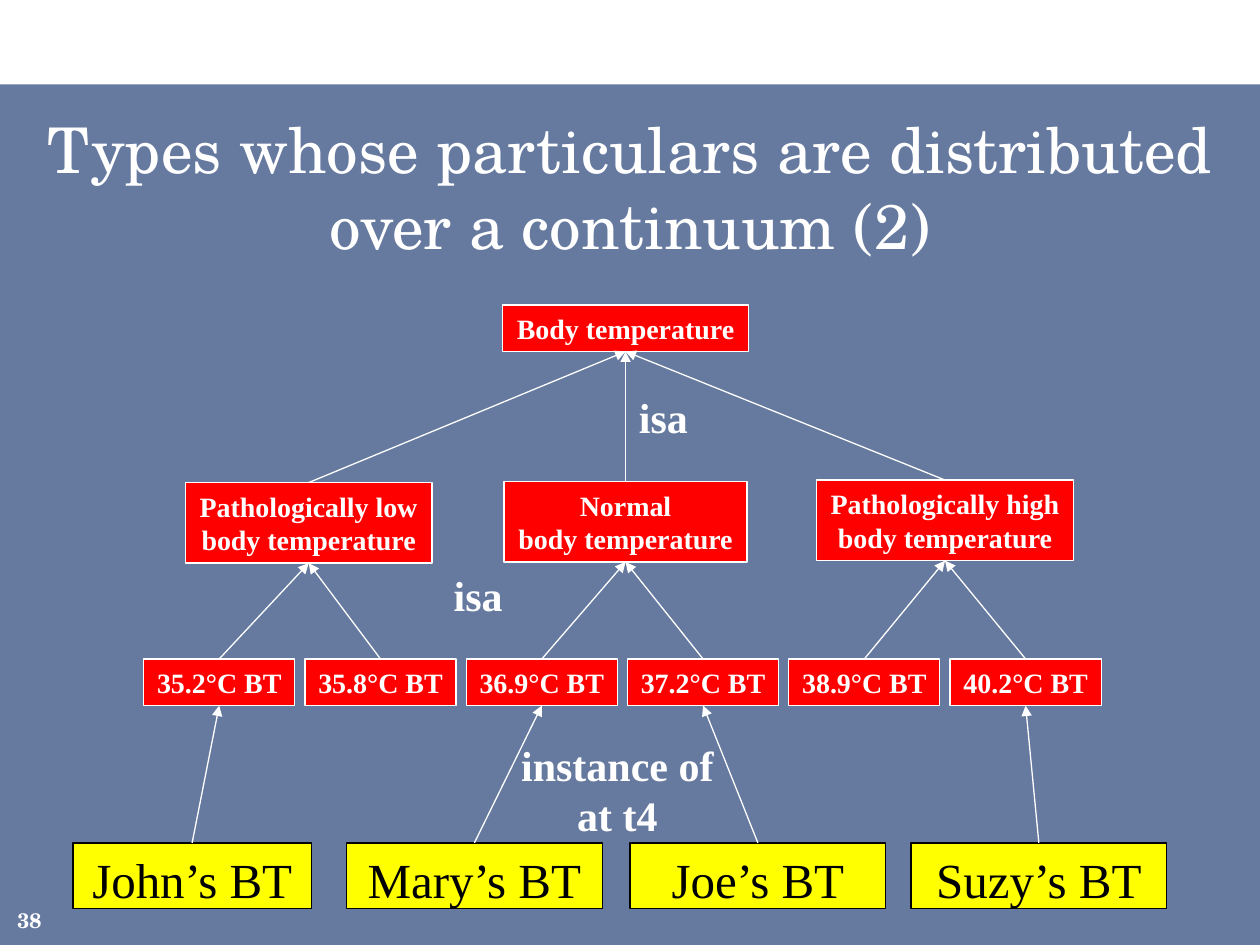
from lxml import etree
from pptx import Presentation
from pptx.dml.color import RGBColor
from pptx.enum.shapes import MSO_CONNECTOR, MSO_SHAPE
from pptx.enum.text import MSO_ANCHOR, PP_ALIGN
from pptx.oxml.ns import qn
from pptx.util import Inches, Pt

RECT = MSO_SHAPE.RECTANGLE
STRAIGHT = MSO_CONNECTOR.STRAIGHT
TOP, MIDDLE, BOTTOM = MSO_ANCHOR.TOP, MSO_ANCHOR.MIDDLE, MSO_ANCHOR.BOTTOM
CENTER, RIGHT = PP_ALIGN.CENTER, PP_ALIGN.RIGHT

NAVY = RGBColor(0x00, 0x20, 0x60)
RED = RGBColor(0xFF, 0x00, 0x00)
YELLOW = RGBColor(0xFF, 0xFF, 0x00)
WHITE = RGBColor(0xFF, 0xFF, 0xFF)
BLACK = RGBColor(0x00, 0x00, 0x00)
SCHOLA, TIMES = "TeX Gyre Schola", "Times New Roman"

W, H = 10, 7.5
BAND_TOP = 0.67
BAND_OPACITY = 60
ONE_LINE, TWO_LINES, PERSON_H = 0.37, 0.64, 0.52
LEAF_Y, LEAF_W, LEAF_X, LEAF_STEP = 5.23, 1.2, 1.14, 1.28
PERSON_Y = 6.69

TITLE = "Types whose particulars are distributed over a continuum (2)"
ROOT = ("Body temperature", 3.99, 2.42, 1.95)
RANGES = [
    (["Pathologically low", "body temperature"], 1.47, 3.83, 1.96),
    (["Normal", "body temperature"], 4, 3.82, 1.93),
    (["Pathologically high", "body temperature"], 6.48, 3.81, 2.04),
]
LEAVES = ["35.2°C BT", "35.8°C BT", "36.9°C BT",
          "37.2°C BT", "38.9°C BT", "40.2°C BT"]
LEAVES_PER_RANGE = 2
PEOPLE = [
    ("John’s BT", 0.58, 1.89, 0),
    ("Mary’s BT", 2.75, 2.03, 2),
    ("Joe’s BT", 5, 2.03, 3),
    ("Suzy’s BT", 7.23, 2.03, 5),
]
RELATIONS = [
    (["isa"], 4.97, 3.06, 0.59, 0.5),
    (["isa"], 3.5, 4.47, 0.59, 0.5),
    (["instance of", "at t4"], 4.03, 5.82, 1.74, 0.91),
]

prs = Presentation()
prs.slide_width, prs.slide_height = Inches(W), Inches(H)
s = prs.slides.add_slide(prs.slide_layouts[6])


def write(sp, lines, size, font=TIMES, color=WHITE, bold=False,
          align=CENTER, anchor=TOP, wrap=True):
    tf = sp.text_frame
    tf.word_wrap = wrap
    tf.vertical_anchor = anchor
    for i, line in enumerate(lines):
        p = tf.paragraphs[0] if i == 0 else tf.add_paragraph()
        p.alignment = align
        r = p.add_run()
        r.text = line
        r.font.size, r.font.name, r.font.bold = Pt(size), font, bold
        r.font.color.rgb = color


def add_text(lines, x, y, w, h, size, **style):
    sp = s.shapes.add_textbox(Inches(x), Inches(y), Inches(w), Inches(h))
    write(sp, lines, size, **style)
    return sp


def add_rect(x, y, w, h, fill, line=None):
    sp = s.shapes.add_shape(RECT, Inches(x), Inches(y), Inches(w), Inches(h))
    sp.shadow.inherit = False
    sp.fill.solid()
    sp.fill.fore_color.rgb = fill
    if line is None:
        sp.line.fill.background()
    else:
        sp.line.color.rgb = line
        sp.line.width = Pt(0.75)
    return sp


def add_type(lines, x, y, w, h):
    sp = add_rect(x, y, w, h, RED, WHITE)
    write(sp, lines, 16, bold=True, anchor=MIDDLE, wrap=False)
    return sp


def add_arrow(child, parent):
    c = s.shapes.add_connector(STRAIGHT, 0, 0, 0, 0)
    c.begin_connect(child, 0)
    c.end_connect(parent, 2)
    c.line.color.rgb = WHITE
    c.line.width = Pt(0.75)
    etree.SubElement(c.line._get_or_add_ln(), qn("a:tailEnd"), type="triangle")
    etree.SubElement(c._element.spPr, qn("a:effectLst"))


band = add_rect(0, BAND_TOP, W, H - BAND_TOP, NAVY)
band_color = band._element.spPr.find(qn("a:solidFill"))[0]
etree.SubElement(band_color, qn("a:alpha"), val=str(BAND_OPACITY * 1000))

add_text([TITLE], 0.25, 0.83, 9.5, 0.83, 36, font=SCHOLA)

label, x, y, w = ROOT
root = add_type([label], x, y, w, ONE_LINE)
ranges = [add_type(lines, x, y, w, TWO_LINES) for lines, x, y, w in RANGES]
leaves = [add_type([label], LEAF_X + i * LEAF_STEP, LEAF_Y, LEAF_W, ONE_LINE)
          for i, label in enumerate(LEAVES)]

for sp in ranges:
    add_arrow(sp, root)
for i, sp in enumerate(leaves):
    add_arrow(sp, ranges[i // LEAVES_PER_RANGE])

for lines, x, y, w, h in RELATIONS:
    add_text(lines, x, y, w, h, 24, bold=True, wrap=False)

for name, x, w, leaf in PEOPLE:
    person = add_rect(x, PERSON_Y, w, PERSON_H, YELLOW, BLACK)
    write(person, [name], 28, color=BLACK)
    add_arrow(person, leaves[leaf])

number = add_text(["38"], 0, 7.08, 0.33, 0.32, 12, font=SCHOLA, bold=True,
                  align=RIGHT, anchor=BOTTOM)
tf = number.text_frame
tf.margin_left = tf.margin_right = tf.margin_top = tf.margin_bottom = 0

prs.save("out.pptx")
